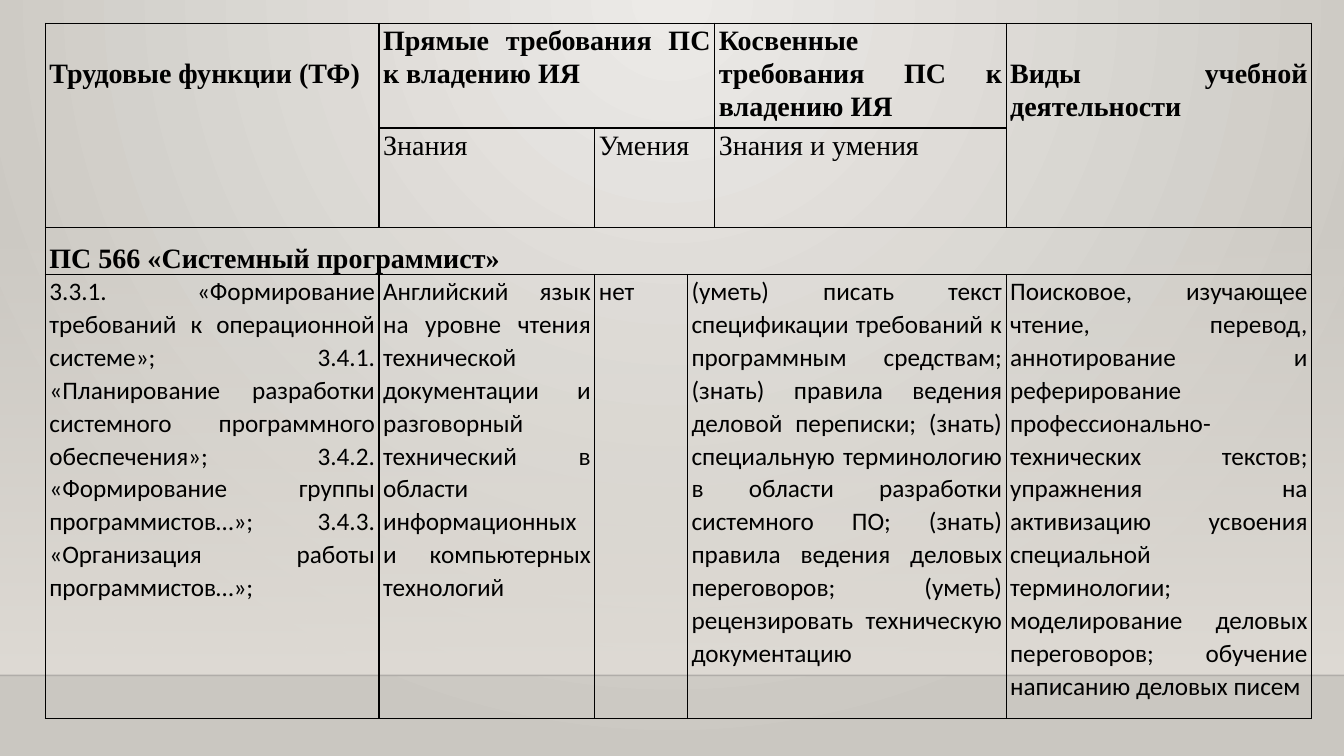
from lxml import etree
from pptx import Presentation
from pptx.dml.color import RGBColor
from pptx.enum.shapes import MSO_CONNECTOR, MSO_SHAPE
from pptx.enum.text import PP_ALIGN
from pptx.oxml.ns import qn
from pptx.util import Inches, Pt

RECT = MSO_SHAPE.RECTANGLE
STRAIGHT = MSO_CONNECTOR.STRAIGHT
JUSTIFY = PP_ALIGN.JUSTIFY

SERIF, SANS = "Times New Roman", "Calibri"
BLACK = "000000"
COL_WIDTHS = [3.31, 2.14, 0.92, 0.27, 2.89, 3.03]
ROW_HEIGHTS = [1.04, 0.99, 0.46, 4.41]
MERGES = [((0, 0), (1, 0)), ((0, 1), (0, 3)), ((0, 5), (1, 5)),
          ((1, 2), (1, 3)), ((2, 0), (2, 5)), ((3, 3), (3, 4))]
HEADINGS = [
    (0, 0, "Трудовые функции (ТФ)", 0.33),
    (0, 1, "Прямые требования ПС к владению ИЯ", 0),
    (0, 4, "Косвенные требования ПС к владению ИЯ", 0),
    (0, 5, "Виды учебной деятельности", 0.33),
]
SUBHEADINGS = [(1, "Знания"), (2, "Умения"), (4, "Знания и умения")]
STANDARD = "ПС 566 «Системный программист»"
DETAILS = [
    (0, "3.3.1. «Формирование требований к операционной системе»; "
        "3.4.1. «Планирование разработки системного программного обеспечения»; "
        "3.4.2. «Формирование группы программистов…»; "
        "3.4.3. «Организация работы программистов…»;"),
    (1, "Английский язык на уровне чтения технической документации и "
        "разговорный технический в области информационных и компьютерных "
        "технологий"),
    (2, "нет"),
    (3, "(уметь) писать текст спецификации требований к программным средствам; "
        "(знать) правила ведения деловой переписки; (знать) специальную "
        "терминологию в области разработки системного ПО; (знать) правила "
        "ведения деловых переговоров; (уметь) рецензировать техническую "
        "документацию"),
    (5, "Поисковое, изучающее чтение, перевод, аннотирование и реферирование "
        "профессионально-технических текстов; упражнения на активизацию "
        "усвоения специальной терминологии; моделирование деловых переговоров; "
        "обучение написанию деловых писем"),
]


def rgb(value):
    """Turn a hex string into a colour."""
    return RGBColor.from_string(value)


def set_gradient(fill, start, end):
    """Give a fill a two-colour gradient."""
    fill.gradient()
    for stop, color in zip(fill.gradient_stops, (start, end)):
        stop.color.rgb = rgb(color)


def set_alpha(element, percent):
    """Set the opacity of the first colour inside an element."""
    color = next(element.iter(qn("a:srgbClr")))
    etree.SubElement(color, qn("a:alpha"), val=str(percent * 1000))


def set_background(slide):
    """Fill the background with a glow from the top centre."""
    set_gradient(slide.background.fill, "ECEAE7", "CAC7C1")
    grad = next(slide.element.iter(qn("a:gradFill")))
    grad.remove(grad.find(qn("a:lin")))
    glow = etree.SubElement(grad, qn("a:path"), path="circle")
    etree.SubElement(glow, qn("a:fillToRect"),
                     l="43000", t="0", r="43000", b="100000")


def add_band(slide):
    """Add the band that fades in towards the bottom."""
    sp = slide.shapes.add_shape(RECT, 0, Inches(2.21), Inches(13.33), Inches(4.49))
    sp.shadow.inherit = False
    sp.line.fill.background()
    set_gradient(sp.fill, "DFDBD5", "DFDBD5")
    sp.fill.gradient_angle = 270
    set_alpha(next(sp.element.iter(qn("a:gradFill"))), 0)


def add_horizon(slide):
    """Add the faint line under the band."""
    line = slide.shapes.add_connector(STRAIGHT, 0, Inches(6.7),
                                      Inches(13.33), Inches(6.7))
    line.line.color.rgb = rgb("000001")
    line.line.width = Pt(1)
    props = line.element.spPr
    set_alpha(props, 20)
    etree.SubElement(props, qn("a:effectLst"))


def style_cell(cell):
    """Clear a cell's fill, set its margins and draw its borders."""
    cell.fill.background()
    cell.margin_left = cell.margin_right = Inches(0.04)
    cell.margin_top = cell.margin_bottom = 0
    props = cell._tc.get_or_add_tcPr()
    for i, side in enumerate("LRTB"):
        ln = etree.Element(qn(f"a:ln{side}"), w=str(Pt(1)))
        fill = etree.SubElement(ln, qn("a:solidFill"))
        etree.SubElement(fill, qn("a:srgbClr"), val=BLACK)
        props.insert(i, ln)


def write_cell(cell, text, size=20, font=SERIF, bold=False, spacing=1.07, top=0):
    """Write one justified paragraph into a cell."""
    cell.margin_top = Inches(top)
    p = cell.text_frame.paragraphs[0]
    p.alignment = JUSTIFY
    p.line_spacing = spacing
    r = p.add_run()
    r.text = text
    r.font.name = font
    r.font.size = Pt(size)
    r.font.bold = bold
    r.font.color.rgb = rgb(BLACK)


def add_grid(slide):
    """Add the empty bordered table with its merged cells."""
    frame = slide.shapes.add_table(
        len(ROW_HEIGHTS), len(COL_WIDTHS), Inches(0.45), Inches(0.23),
        Inches(sum(COL_WIDTHS)), Inches(sum(ROW_HEIGHTS)))
    table = frame.table
    table.first_row = table.horz_banding = False
    for column, width in zip(table.columns, COL_WIDTHS):
        column.width = Inches(width)
    for row, height in zip(table.rows, ROW_HEIGHTS):
        row.height = Inches(height)
    for cell in table.iter_cells():
        style_cell(cell)
    for first, last in MERGES:
        table.cell(*first).merge(table.cell(*last))
    return table


def main():
    """Build the slide and save it."""
    prs = Presentation()
    prs.slide_width, prs.slide_height = Inches(13.33), Inches(7.5)
    slide = prs.slides.add_slide(prs.slide_layouts[6])
    set_background(slide)
    add_band(slide)
    add_horizon(slide)
    table = add_grid(slide)
    for row, col, text, top in HEADINGS:
        write_cell(table.cell(row, col), text, bold=True, top=top)
    for col, text in SUBHEADINGS:
        write_cell(table.cell(1, col), text)
    write_cell(table.cell(2, 0), STANDARD, bold=True, spacing=1.5)
    for col, text in DETAILS:
        write_cell(table.cell(3, col), text, size=18, font=SANS)
    prs.save("out.pptx")


if __name__ == "__main__":
    main()
